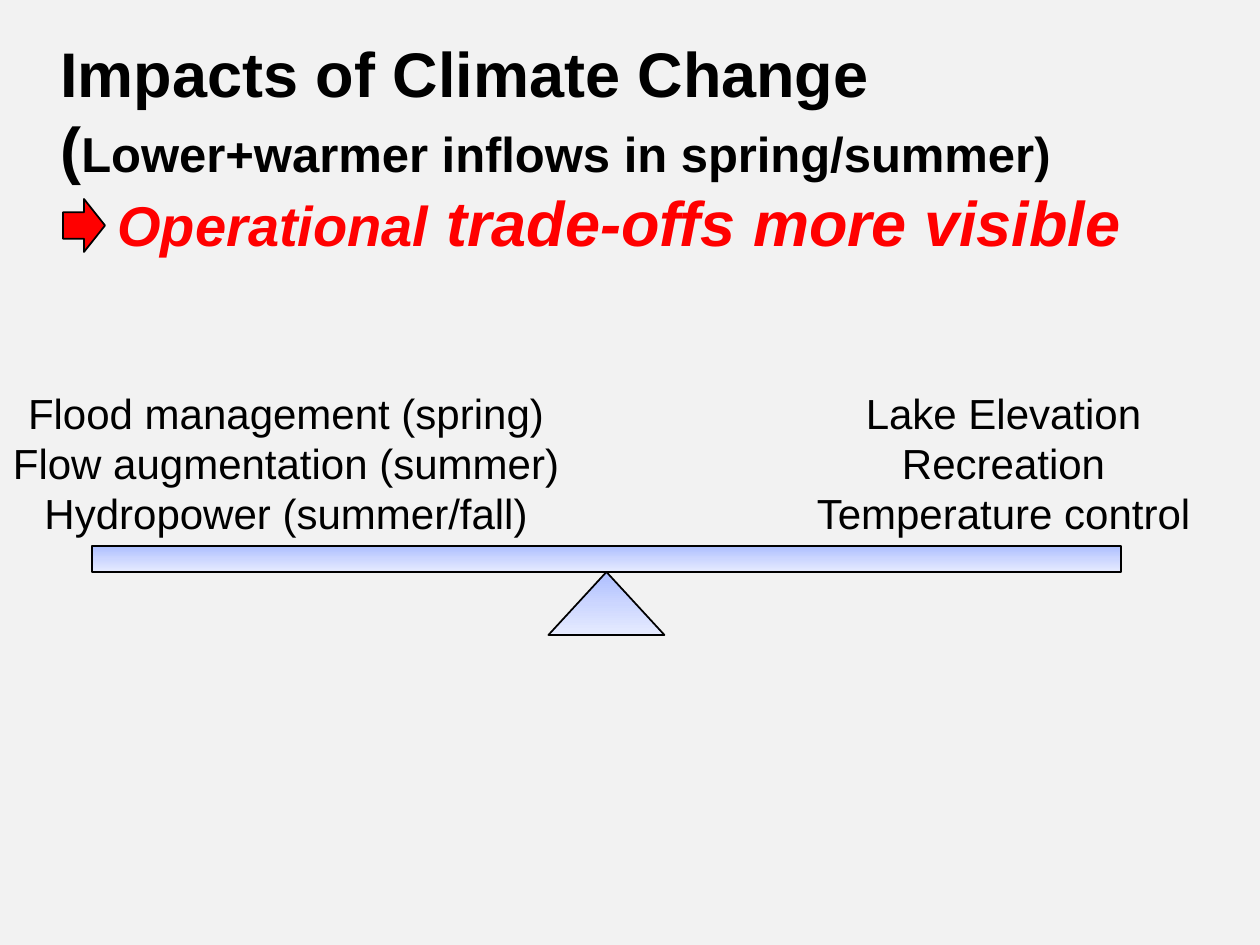
from copy import deepcopy

from pptx import Presentation
from pptx.dml.color import RGBColor
from pptx.enum.shapes import MSO_SHAPE
from pptx.enum.text import MSO_ANCHOR, PP_ALIGN
from pptx.util import Emu, Pt

PX = 914400 / 126
BLACK = RGBColor(0, 0, 0)
RED = RGBColor(255, 0, 0)
BACKGROUND = RGBColor(0xF2, 0xF2, 0xF2)
BLUES = [RGBColor(0xAC, 0xBE, 0xFF), RGBColor(0xCC, 0xD6, 0xFF), RGBColor(0xE6, 0xEB, 0xFF)]

# Each paragraph is a list of (text, size) runs.
TITLE = [
    [("Impacts of Climate Change", 36)],
    [("(", 36), ("Lower+warmer inflows in spring/summer)", 28)],
]
MESSAGE = [[("Operational", 32), (" trade-offs more visible", 36)]]
LEFT_SIDE = ["Flood management (spring)", "Flow augmentation (summer)", "Hydropower (summer/fall)"]
RIGHT_SIDE = ["Lake Elevation", "Recreation", "Temperature control"]

BEAM = (92, 546, 1029, 26)
PIVOT_W, PIVOT_H = 116, 63
LABEL_TOP, LABEL_H = 381, 165


def px(*lengths):
    return [Emu(round(n * PX)) for n in lengths]


def add_text(slide, box, paragraphs, color=BLACK, bold=False, italic=False,
             align=PP_ALIGN.LEFT, anchor=MSO_ANCHOR.TOP):
    tf = slide.shapes.add_textbox(*px(*box)).text_frame
    tf.word_wrap = True
    tf.vertical_anchor = anchor
    for i, runs in enumerate(paragraphs):
        p = tf.add_paragraph() if i else tf.paragraphs[0]
        p.alignment = align
        p.font.name = "Arial"
        p.font.bold, p.font.italic = bold, italic
        p.font.color.rgb = color
        for text, size in runs:
            r = p.add_run()
            r.text = text
            r.font.size = Pt(size)


def add_outlined(slide, kind, box):
    sp = slide.shapes.add_shape(kind, *px(*box))
    sp.shadow.inherit = False
    sp.line.color.rgb = BLACK
    sp.line.width = Pt(1)
    return sp


def fill_blue(sp):
    """Fill with three evenly spaced blues, dark at the top."""
    sp.fill.gradient()
    sp.fill.gradient_angle = 270
    stops = sp.fill._fill._gradFill.gsLst
    stops.insert(1, deepcopy(stops[0]))
    for i, (stop, color) in enumerate(zip(sp.fill.gradient_stops, BLUES)):
        stop.position = i / 2
        stop.color.rgb = color


def main():
    prs = Presentation()
    prs.slide_width, prs.slide_height = px(1260, 945)
    slide = prs.slides.add_slide(prs.slide_layouts[6])
    slide.background.fill.solid()
    slide.background.fill.fore_color.rgb = BACKGROUND

    left, top, width, height = BEAM
    pivot = (left + (width - PIVOT_W) / 2, top + height, PIVOT_W, PIVOT_H)
    for kind, box in [(MSO_SHAPE.ISOSCELES_TRIANGLE, pivot), (MSO_SHAPE.RECTANGLE, BEAM)]:
        fill_blue(add_outlined(slide, kind, box))

    for x, w, lines in [(798, 411, RIGHT_SIDE), (-34, 640, LEFT_SIDE)]:
        add_text(slide, (x, LABEL_TOP, w, LABEL_H), [[(line, 24)] for line in lines],
                 align=PP_ALIGN.CENTER)

    add_text(slide, (48, 28, 1144, 210), TITLE, bold=True)
    arrow = add_outlined(slide, MSO_SHAPE.RIGHT_ARROW, (63, 199, 42, 53))
    arrow.fill.solid()
    arrow.fill.fore_color.rgb = RED
    add_text(slide, (105, 179, 1144, 84), MESSAGE, RED, bold=True, italic=True,
             anchor=MSO_ANCHOR.MIDDLE)

    prs.save("out.pptx")


if __name__ == "__main__":
    main()
